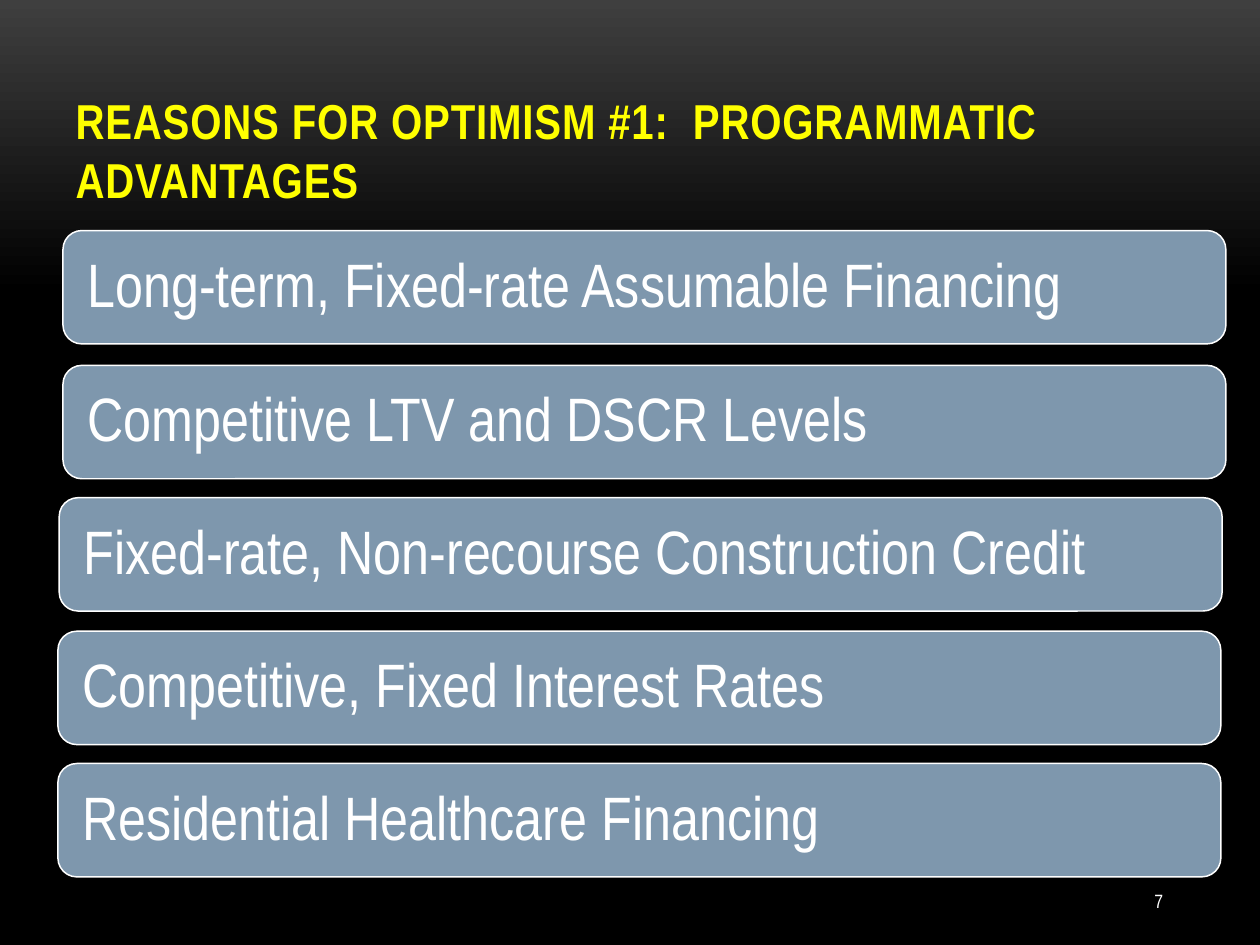
from copy import deepcopy

from pptx import Presentation
from pptx.dml.color import RGBColor
from pptx.enum.shapes import MSO_SHAPE
from pptx.enum.text import MSO_ANCHOR, MSO_AUTO_SIZE, PP_ALIGN
from pptx.oxml.ns import qn
from pptx.util import Inches, Pt

ROUNDED = MSO_SHAPE.ROUNDED_RECTANGLE
MIDDLE, BOTTOM = MSO_ANCHOR.MIDDLE, MSO_ANCHOR.BOTTOM
LEFT, RIGHT = PP_ALIGN.LEFT, PP_ALIGN.RIGHT
NO_AUTOFIT = MSO_AUTO_SIZE.NONE
FONT = "Arial Narrow"
WHITE, YELLOW, BLUE_GREY = "FFFFFF", "FFFF00", "7E97AD"
DARK_GREY, BLACK = "3F3F3F", "000000"

ADVANTAGES = [
    ("Long-term, Fixed-rate Assumable Financing", 0.5, 1.83),
    ("Competitive LTV and DSCR Levels", 0.5, 2.9),
    ("Fixed-rate, Non-recourse Construction Credit", 0.47, 3.95),
    ("Competitive, Fixed Interest Rates", 0.46, 5.01),
    ("Residential Healthcare Financing", 0.46, 6.06),
]


def color(hex_string):
    return RGBColor.from_string(hex_string)


def write_text(shape, text, size, text_color=WHITE, bold=False, align=LEFT,
               anchor=MIDDLE, inset=None, line_spacing=1.0, tracking=None):
    frame = shape.text_frame
    frame.word_wrap = True
    frame.auto_size = NO_AUTOFIT
    frame.vertical_anchor = anchor
    if inset is not None:
        frame.margin_left = frame.margin_right = Inches(inset)
        frame.margin_top = frame.margin_bottom = Inches(inset)
    paragraph = frame.paragraphs[0]
    paragraph.alignment = align
    paragraph.line_spacing = line_spacing
    run = paragraph.add_run()
    run.text = text
    run.font.name = FONT
    run.font.size = Pt(size)
    run.font.bold = bold
    run.font.color.rgb = color(text_color)
    if tracking is not None:
        run.font._element.set("spc", str(int(tracking * 100)))


def set_background(slide):
    fill = slide.background.fill
    fill.gradient()
    fill.gradient_angle = 270
    for stop, position, stop_color in zip(
            fill.gradient_stops, (0, 0.31), (DARK_GREY, BLACK)):
        stop.position = position
        stop.color.rgb = color(stop_color)
    stop_list = slide.element.find(".//" + qn("a:gsLst"))
    stop_list.append(deepcopy(stop_list[-1]))
    fill.gradient_stops[2].position = 1


def add_title(slide, text):
    title = slide.shapes.title
    title.left, title.top = Inches(0.5), Inches(0.57)
    title.width, title.height = Inches(9), Inches(1.13)
    write_text(title, text, 28, text_color=YELLOW, bold=True,
               anchor=BOTTOM, tracking=0.5)


def add_bar(slide, text, left, top):
    bar = slide.shapes.add_shape(
        ROUNDED, Inches(left), Inches(top), Inches(9.23), Inches(0.9))
    bar.shadow.inherit = False
    bar.fill.solid()
    bar.fill.fore_color.rgb = color(BLUE_GREY)
    bar.line.color.rgb = color(WHITE)
    bar.line.width = Pt(0.85)
    write_text(bar, text, 35, inset=0.15, line_spacing=0.9)


def add_page_number(slide, number):
    box = slide.shapes.add_textbox(
        Inches(8.25), Inches(6.95), Inches(1.08), Inches(0.4))
    write_text(box, number, 11, align=RIGHT)


def main():
    presentation = Presentation()
    presentation.slide_width = Inches(10)
    presentation.slide_height = Inches(7.5)
    slide = presentation.slides.add_slide(presentation.slide_layouts[5])
    set_background(slide)
    add_title(slide, "REASONS FOR OPTIMISM #1:  PROGRAMMATIC ADVANTAGES")
    for text, left, top in ADVANTAGES:
        add_bar(slide, text, left, top)
    add_page_number(slide, "7")
    presentation.save("out.pptx")


if __name__ == "__main__":
    main()
